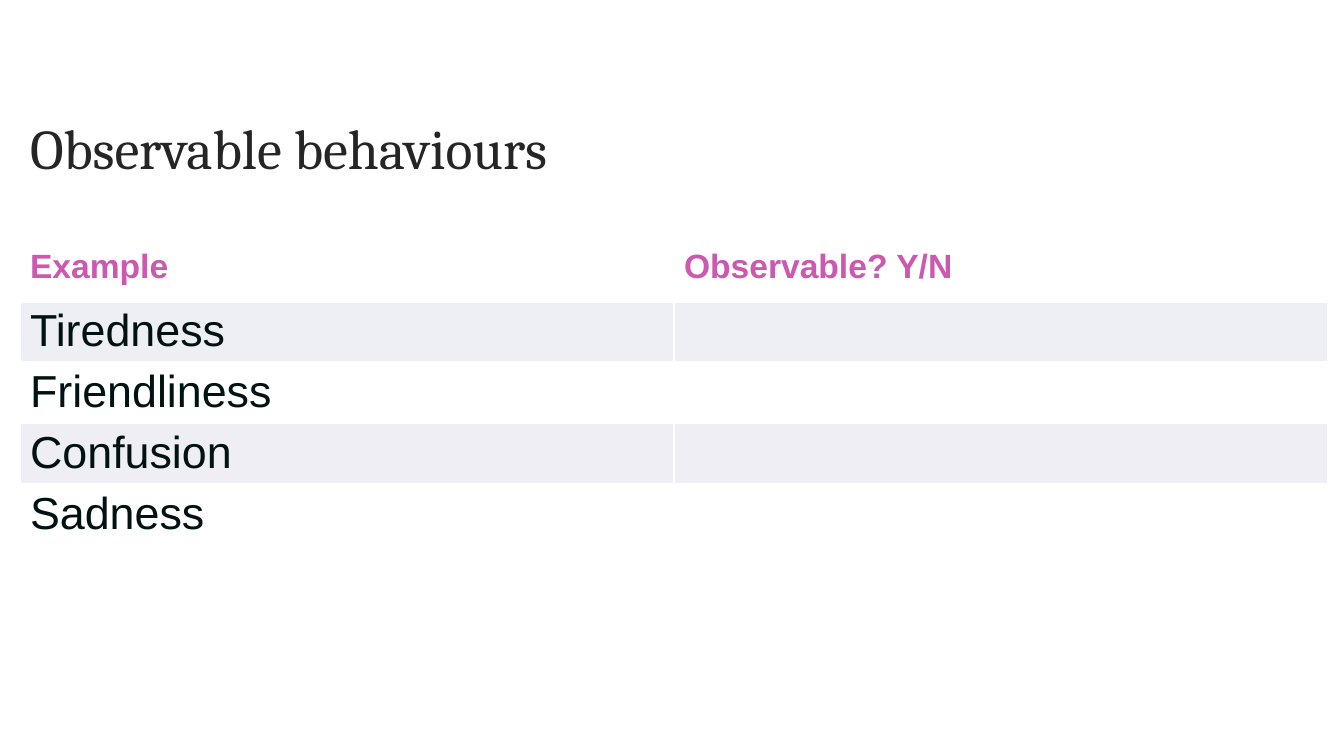
"""Build the slide "Observable behaviours" with its table of examples."""
import pptx
import pptx.dml.color
import pptx.enum.text
import pptx.oxml
import pptx.oxml.ns
import pptx.util

SCALE = 914400 / 100.8
THEME = {
    "title_font": "Cambria", "body_font": "Arial",
    "title_size": 40, "header_size": 24, "body_size": 32,
    "title": "252525", "header": "CC58B0", "body": "001312",
    "plain": "FFFFFF", "bands": {1: "EEEEF5", 3: "EEEEF4"},
    "border": 1, "header_rule": 3,
}
ROWS = [
    ("Example", "Observable? Y/N"),
    ("Tiredness", ""),
    ("Friendliness", ""),
    ("Confusion", ""),
    ("Sadness", ""),
    ("", ""),
]
ROW_HEIGHTS = [58, 61, 61, 61, 61, 57]


def px(length):
    """Turn pixels into EMU."""
    return pptx.util.Emu(round(length * SCALE))


def style_font(font, name, size, color, bold=False):
    """Set the face, size, colour and weight of a font."""
    font.name = name
    font.size = pptx.util.Pt(size)
    font.bold = bold
    font.color.rgb = pptx.dml.color.RGBColor.from_string(color)


deck = pptx.Presentation()
deck.slide_width, deck.slide_height = px(1344), px(756)
page = deck.slides.add_slide(deck.slide_layouts[5])

title = page.shapes.title
title.left, title.top, title.width, title.height = px(20), px(111), px(1282), px(80)
frame = title.text_frame
frame.text = "Observable behaviours"
frame.word_wrap = True
frame.auto_size = pptx.enum.text.MSO_AUTO_SIZE.NONE
frame.vertical_anchor = pptx.enum.text.MSO_ANCHOR.MIDDLE
para = frame.paragraphs[0]
para.alignment = pptx.enum.text.PP_ALIGN.LEFT
para.line_spacing = 0.9
style_font(para.font, THEME["title_font"], THEME["title_size"], THEME["title"])

table = page.shapes.add_table(
    len(ROWS), 2, px(20), px(243), px(1308), px(sum(ROW_HEIGHTS))
).table
for column in table.columns:
    column.width = px(654)

for row_index, (texts, height) in enumerate(zip(ROWS, ROW_HEIGHTS)):
    table.rows[row_index].height = px(height)
    role = "header" if row_index == 0 else "body"
    for column_index, text in enumerate(texts):
        cell = table.cell(row_index, column_index)
        properties = cell._tc.get_or_add_tcPr()
        for side in ("L", "R", "T", "B"):
            under_header = (row_index, side) in ((0, "B"), (1, "T"))
            width = THEME["header_rule" if under_header else "border"]
            properties.append(pptx.oxml.parse_xml(
                f'<a:ln{side} {pptx.oxml.ns.nsdecls("a")} w="{pptx.util.Pt(width)}">'
                f'<a:solidFill><a:srgbClr val="{THEME["plain"]}"/></a:solidFill>'
                f'</a:ln{side}>'
            ))
        cell.fill.solid()
        cell.fill.fore_color.rgb = pptx.dml.color.RGBColor.from_string(
            THEME["bands"].get(row_index, THEME["plain"])
        )
        if text:
            cell.text = text
            style_font(cell.text_frame.paragraphs[0].font, THEME["body_font"],
                       THEME[f"{role}_size"], THEME[role], role == "header")

deck.save("out.pptx")
